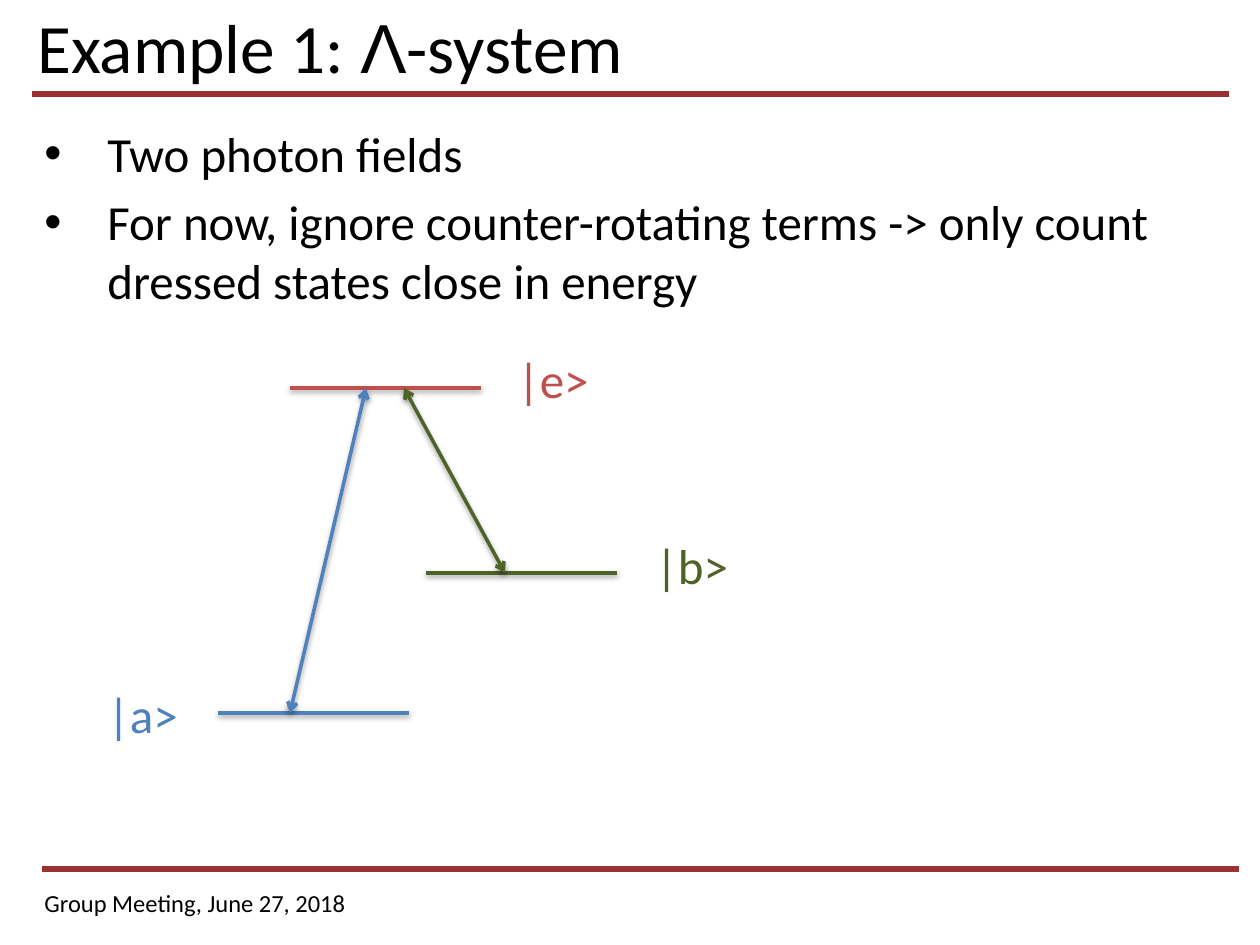
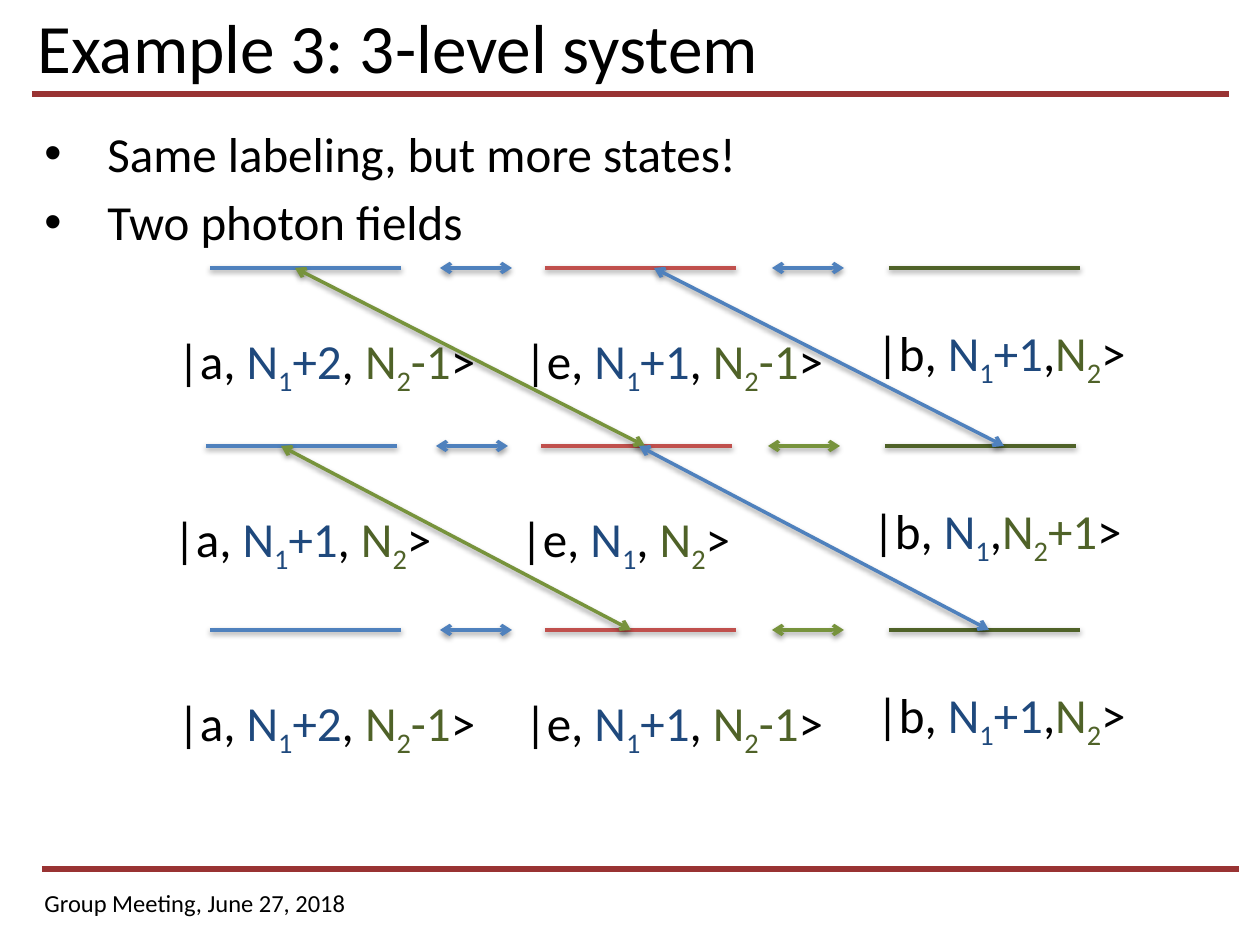
import pptx
import pptx.dml.color
import pptx.enum.shapes
import pptx.enum.text
import pptx.oxml
import pptx.oxml.ns
import pptx.util
from lxml import etree

PX = 914400 // 126  # EMU in one px

# Shared style
BLACK, RULE = "000000", "993333"
BLUE, RED, GREEN, LIME = "4F81BD", "C0504D", "4F6228", "77933C"
NAVY = "1F497D"
FONT, GREEK_FONT = "Calibri", "Arial"
TITLE_SIZE, BODY_SIZE, FOOTER_SIZE = 39.6, 28, 14
FOOTER = "Group Meeting, June 27, 2018"
RULES = [(32, 94), (42, 869)]
RULE_LENGTH = 1197
LEVEL_LENGTH = 191

# Slide 1: title runs, bullets, levels and transitions
LAMBDA_TITLE = [("Example 1: ", FONT), ("Λ", GREEK_FONT), ("-system", FONT)]
LAMBDA_BULLETS = [
    "Two photon fields",
    "For now, ignore counter-rotating terms -> only count dressed states close in energy",
]
# label, colour, level start (x, y), label corner (x, y)
LAMBDA_LEVELS = [
    ("|a>", BLUE, (218, 713), (95, 678)),
    ("|b>", GREEN, (426, 573), (643, 529)),
    ("|e>", RED, (290, 388), (505, 343)),
]
LAMBDA_ARROWS = [(290, 713, 366, 388, BLUE), (505, 573, 404, 388, GREEN)]

# Slide 2: title, bullets and ladder of dressed states
LADDER_TITLE = [("Example 3: 3-level system", FONT)]
LADDER_BULLETS = ["Same labeling, but more states!", "Two photon fields"]
# state, colour, level x, label offset (x, y), separator of the photon numbers
COLUMNS = [
    ("a", BLUE, 210, (-45, 56), ", "),
    ("e", RED, 545, (-33, 56), ", "),
    ("b", GREEN, 889, (-25, 48), ","),
]
OUTER_STATES = [("+2", "-1"), ("+1", "-1"), ("+1", "")]
MIDDLE_STATES = [("+1", ""), ("", ""), ("", "+1")]
# level y, x shift, photon numbers per column, colours of the short arrows
ROWS = [
    (268, 0, OUTER_STATES, (BLUE, BLUE)),
    (446, -4, MIDDLE_STATES, (BLUE, LIME)),
    (630, 0, OUTER_STATES, (BLUE, LIME)),
]
COUPLING_X, COUPLING_LENGTH = (440, 772), 72
# start x of the two long arrows below each of the first two rows
DIAGONAL_STARTS = [(295, 654), (281, 639)]
DIAGONAL_COLOURS = (LIME, BLUE)
DIAGONAL_WIDTH = 350


def rgb(colour):
    return pptx.dml.color.RGBColor.from_string(colour)


def add_run(p, text, size, colour=BLACK, font=FONT, subscript=False):
    r = p.add_run()
    r.text = text
    r.font.size = pptx.util.Pt(size)
    r.font.name = font
    r.font.color.rgb = rgb(colour)
    if subscript:
        r.font._element.set("baseline", "-25000")


def add_box(s, x, y, w, h):
    tf = s.shapes.add_textbox(x * PX, y * PX, w * PX, h * PX).text_frame
    tf.word_wrap = True
    return tf


def add_line(s, x1, y1, x2, y2, colour, width=2, arrows=False, shadow=True):
    straight = pptx.enum.shapes.MSO_CONNECTOR.STRAIGHT
    sp = s.shapes.add_connector(straight, x1 * PX, y1 * PX, x2 * PX, y2 * PX)
    sp.line.color.rgb = rgb(colour)
    sp.line.width = pptx.util.Pt(width)
    qn = pptx.oxml.ns.qn
    if arrows:
        for end in ("a:headEnd", "a:tailEnd"):
            etree.SubElement(sp.line._get_or_add_ln(), qn(end), type="arrow")
    effects = etree.SubElement(sp._element.spPr, qn("a:effectLst"))
    if shadow:
        outer = etree.SubElement(effects, qn("a:outerShdw"), blurRad="40000",
                                 dist="20000", dir="5400000", rotWithShape="0")
        black = etree.SubElement(outer, qn("a:srgbClr"), val=BLACK)
        etree.SubElement(black, qn("a:alpha"), val="38000")


def add_level(s, x, y, colour):
    add_line(s, x, y, x + LEVEL_LENGTH, y, colour)


def add_bullets(s, bullets):
    tf = add_box(s, 32, 117, 1150, 697)
    for i, text in enumerate(bullets):
        p = tf.add_paragraph() if i else tf.paragraphs[0]
        if i:
            p.space_before = pptx.util.Pt(BODY_SIZE * 0.2)
        pPr = p._p.get_or_add_pPr()
        pPr.set("marL", "457200")
        pPr.set("indent", "-457200")
        etree.SubElement(pPr, pptx.oxml.ns.qn("a:buFont"), typeface="Arial")
        etree.SubElement(pPr, pptx.oxml.ns.qn("a:buChar"), char="•")
        add_run(p, text, BODY_SIZE)


def new_slide(prs, title, bullets):
    s = prs.slides.add_slide(prs.slide_layouts[6])
    for x, y in RULES:
        add_line(s, x, y, x + RULE_LENGTH, y, RULE, 3.25, shadow=False)
    add_run(add_box(s, 32, 882, 459, 43).paragraphs[0], FOOTER, FOOTER_SIZE)
    tf = add_box(s, 25, 5, 1116, 81)
    tf.vertical_anchor = pptx.enum.text.MSO_ANCHOR.MIDDLE
    for text, font in title:
        add_run(tf.paragraphs[0], text, TITLE_SIZE, font=font)
    add_bullets(s, bullets)
    return s


def add_state(s, x, y, state, photons, separator):
    """Label such as |a, N1+2, N2-1> with coloured photon numbers."""
    p = add_box(s, x, y, 331, 72).paragraphs[0]
    leads = (f"|{state}, ", separator)
    for lead, number, change, colour in zip(leads, "12", photons, (NAVY, GREEN)):
        add_run(p, lead, BODY_SIZE)
        add_run(p, "N", BODY_SIZE, colour)
        add_run(p, number, BODY_SIZE, colour, subscript=True)
        if change:
            add_run(p, change, BODY_SIZE, colour)
    add_run(p, ">", BODY_SIZE)


def build_lambda(prs):
    s = new_slide(prs, LAMBDA_TITLE, LAMBDA_BULLETS)
    for label, colour, start, corner in LAMBDA_LEVELS:
        add_level(s, *start, colour)
        add_run(add_box(s, *corner, 110, 72).paragraphs[0], label, BODY_SIZE, colour)
    for arrow in LAMBDA_ARROWS:
        add_line(s, *arrow, arrows=True)


def build_ladder(prs):
    s = new_slide(prs, LADDER_TITLE, LADDER_BULLETS)
    for y, shift, states, coupling_colours in ROWS:
        for (state, colour, x, (dx, dy), separator), photons in zip(COLUMNS, states):
            add_level(s, x + shift, y, colour)
            add_state(s, x + shift + dx, y + dy, state, photons, separator)
        for x, colour in zip(COUPLING_X, coupling_colours):
            add_line(s, x + shift, y, x + shift + COUPLING_LENGTH, y, colour, arrows=True)
    # Long arrows join each row to the next
    for upper, lower, starts in zip(ROWS, ROWS[1:], DIAGONAL_STARTS):
        for x, colour in zip(starts, DIAGONAL_COLOURS):
            add_line(s, x, upper[0], x + DIAGONAL_WIDTH, lower[0], colour, arrows=True)


def main():
    prs = pptx.Presentation()
    prs.slide_width, prs.slide_height = 1260 * PX, 945 * PX
    build_lambda(prs)
    build_ladder(prs)
    prs.save("out.pptx")


if __name__ == "__main__":
    main()
